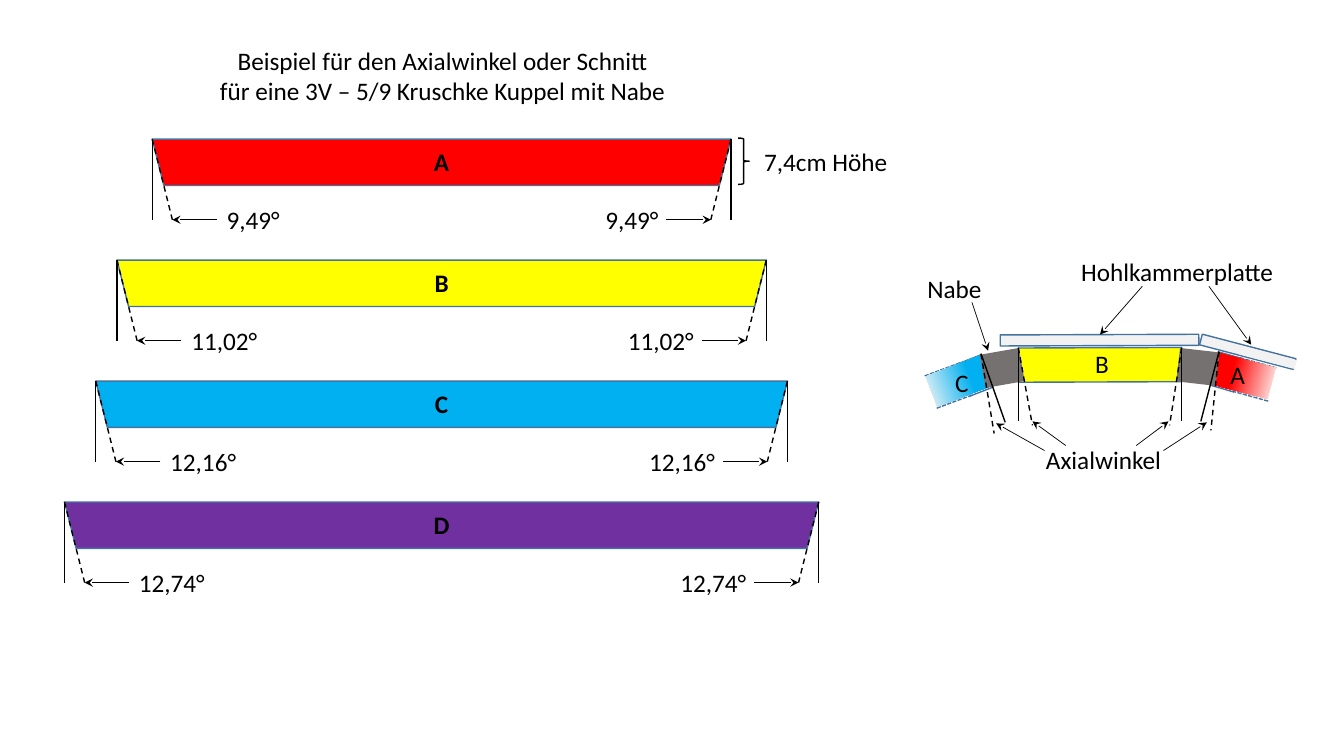
"""Build the slide on axial angles of a 3V dome with hubs."""
from lxml.etree import SubElement
from pptx import Presentation
from pptx.dml.color import RGBColor
from pptx.enum.dml import MSO_LINE
from pptx.enum.shapes import MSO_CONNECTOR, MSO_SHAPE
from pptx.enum.text import MSO_ANCHOR, PP_ALIGN
from pptx.oxml.ns import qn
from pptx.util import Inches, Pt

BLACK, EDGE, HUB, PLATE = "000000", "43739E", "767171", "F2F2F2"
RED, YELLOW, BLUE, PURPLE, PALE = "FF0000", "FFFF00", "00B0F0", "7030A0", "FEF8F5"


def add_line(start, end, color=BLACK, width=1, dash=None, arrow=False):
    connector = slide.shapes.add_connector(
        MSO_CONNECTOR.STRAIGHT, *[Inches(value) for value in (*start, *end)])
    connector.line.color.rgb = RGBColor.from_string(color)
    connector.line.width = Pt(width)
    if dash:
        connector.line.dash_style = dash
    properties = connector.element.spPr
    if arrow:
        SubElement(properties.find(qn("a:ln")), qn("a:tailEnd"), type="stealth")
    SubElement(properties, qn("a:effectLst"))


def add_label(text, left, top, width, align=PP_ALIGN.CENTER, bold=False):
    box = slide.shapes.add_textbox(Inches(left), Inches(top), Inches(width), Inches(0.4))
    box.text_frame.word_wrap = True
    paragraph = box.text_frame.paragraphs[0]
    paragraph.text = text
    paragraph.alignment = align
    paragraph.font.name = "Calibri"
    paragraph.font.size = Pt(18)
    paragraph.font.bold = bold
    paragraph.font.color.rgb = RGBColor.from_string(BLACK)


presentation = Presentation()
presentation.slide_width = Inches(13.33)
presentation.slide_height = Inches(7.5)
slide = presentation.slides.add_slide(presentation.slide_layouts[5])

heading = slide.shapes.title
heading.left, heading.top = Inches(2.05), Inches(0.4)
heading.width, heading.height = Inches(4.68), Inches(0.71)
heading.text_frame.text = ("Beispiel für den Axialwinkel oder Schnitt\n"
                           "für eine 3V – 5/9 Kruschke Kuppel mit Nabe")
heading.text_frame.vertical_anchor = MSO_ANCHOR.TOP
heading.text_frame.word_wrap = True
for paragraph in heading.text_frame.paragraphs:
    paragraph.alignment = PP_ALIGN.CENTER
    paragraph.font.name = "Calibri"
    paragraph.font.size = Pt(18)
    paragraph.font.color.rgb = RGBColor.from_string(BLACK)

struts = [("A", 5.74, RED, "9,49°"), ("B", 6.44, YELLOW, "11,02°"),
          ("C", 6.86, BLUE, "12,16°"), ("D", 7.48, PURPLE, "12,74°")]
center = 4.38
for row, (letter, length, color, angle) in enumerate(struts):
    top = 1.38 + 1.2 * row
    strut = slide.shapes.add_shape(
        MSO_SHAPE.TRAPEZOID, Inches(center - length / 2), Inches(top),
        Inches(length), Inches(0.46))
    strut.rotation = 180
    strut.shadow.inherit = False
    strut.fill.solid()
    strut.fill.fore_color.rgb = RGBColor.from_string(color)
    strut.line.color.rgb = RGBColor.from_string(EDGE)
    strut.line.width = Pt(1)
    add_label(letter, center - 0.18, top + 0.02, 0.36, bold=True)
    for side, align in ((-1, PP_ALIGN.LEFT), (1, PP_ALIGN.RIGHT)):
        corner = center + side * length / 2
        inner = corner - side * 0.64
        bottom = top + 0.8
        add_line((corner, top), (corner, bottom))
        add_line((corner, top), (corner - side * 0.2, bottom), dash=MSO_LINE.DASH)
        add_line((inner, bottom), (corner - side * 0.2, bottom), arrow=True)
        add_label(angle, inner if side < 0 else inner - 0.88, bottom - 0.2, 0.9, align)

brace = slide.shapes.add_shape(
    MSO_SHAPE.RIGHT_BRACE, Inches(7.32), Inches(1.37), Inches(0.11), Inches(0.46))
brace.shadow.inherit = False
brace.fill.background()
brace.line.color.rgb = RGBColor.from_string(BLACK)
brace.line.width = Pt(1)
add_label("7,4cm Höhe", 7.47, 1.4, 1.44)

strut_edges = [
    ((9.85, 3.84), (9.73, 3.52), None), ((9.85, 3.84), (9.62, 3.93), None),
    ((9.73, 3.52), (9.5, 3.61), None), ((9.64, 3.92), (9.29, 4.05), MSO_LINE.SQUARE_DOT),
    ((9.52, 3.6), (9.17, 3.73), MSO_LINE.SQUARE_DOT),
    ((12.08, 3.49), (12, 3.82), None), ((12.08, 3.49), (12.33, 3.56), None),
    ((12, 3.82), (12.24, 3.89), None), ((12.3, 3.55), (12.66, 3.65), MSO_LINE.SQUARE_DOT),
    ((12.22, 3.88), (12.58, 3.98), MSO_LINE.SQUARE_DOT)]
for start, end, dash in strut_edges:
    add_line(start, end, EDGE, dash=dash)

section_parts = [
    (9.35, 3.49, 0.32, 0.58, 248.9, BLUE, None, True),
    (10.85, 2.39, 0.11, 1.97, 89.8, PLATE, EDGE, False),
    (10.74, 2.81, 0.34, 1.62, 89.8, YELLOW, EDGE, False),
    (12.17, 3.44, 0.32, 0.58, 104.7, RED, None, True),
    (9.78, 3.46, 0.32, 0.38, 80.1, HUB, HUB, False),
    (11.72, 3.45, 0.32, 0.38, 96.5, HUB, HUB, False),
    (12.32, 3.01, 0.11, 0.96, 104.7, PLATE, EDGE, False),
    (12.53, 3.26, 0.09, 0.57, 104.7, PLATE, None, False)]
for left, top, width, height, rotation, color, edge, fading in section_parts:
    part = slide.shapes.add_shape(
        MSO_SHAPE.RECTANGLE, Inches(left), Inches(top), Inches(width), Inches(height))
    part.rotation = rotation
    part.shadow.inherit = False
    if fading:
        part.fill.gradient()
        part.fill.gradient_angle = 270
        for stop, shade, position in zip(part.fill.gradient_stops, (PALE, color), (0, 0.66)):
            stop.color.rgb = RGBColor.from_string(shade)
            stop.position = position
    else:
        part.fill.solid()
        part.fill.fore_color.rgb = RGBColor.from_string(color)
    if edge:
        part.line.color.rgb = RGBColor.from_string(edge)
        part.line.width = Pt(1)
    else:
        part.line.fill.background()

axis_cuts = [
    ((9.73, 3.51), (9.97, 4.19), (9.86, 4.3)),
    ((10.1, 3.45), (10.1, 4.18), (10.24, 4.22)),
    ((11.72, 3.45), (11.72, 4.18), (11.6, 4.22)),
    ((12.09, 3.49), (11.91, 4.18), (12.01, 4.27))]
for corner, axis_end, cut_end in axis_cuts:
    add_line(corner, axis_end)
    add_line(corner, cut_end, dash=MSO_LINE.DASH)

pointers = [
    ((10.57, 4.42), (10.24, 4.18)), ((11.27, 4.42), (11.59, 4.18)),
    ((10.36, 4.47), (9.88, 4.2)), ((11.54, 4.47), (11.97, 4.19)),
    ((9.64, 3), (9.8, 3.48)), ((11.33, 2.84), (10.91, 3.32)),
    ((11.99, 2.84), (12.41, 3.42))]
for start, end in pointers:
    add_line(start, end, width=0.5, arrow=True)

section_labels = [
    ("Axialwinkel", 10.27, 4.36, 1.35), ("Nabe", 9.09, 2.66, 0.75),
    ("Hohlkammerplatte", 10.61, 2.49, 2.13), ("A", 12.1, 3.52, 0.35),
    ("B", 10.76, 3.41, 0.34), ("C", 9.37, 3.59, 0.34)]
for text, left, top, width in section_labels:
    add_label(text, left, top, width)

presentation.save("out.pptx")
